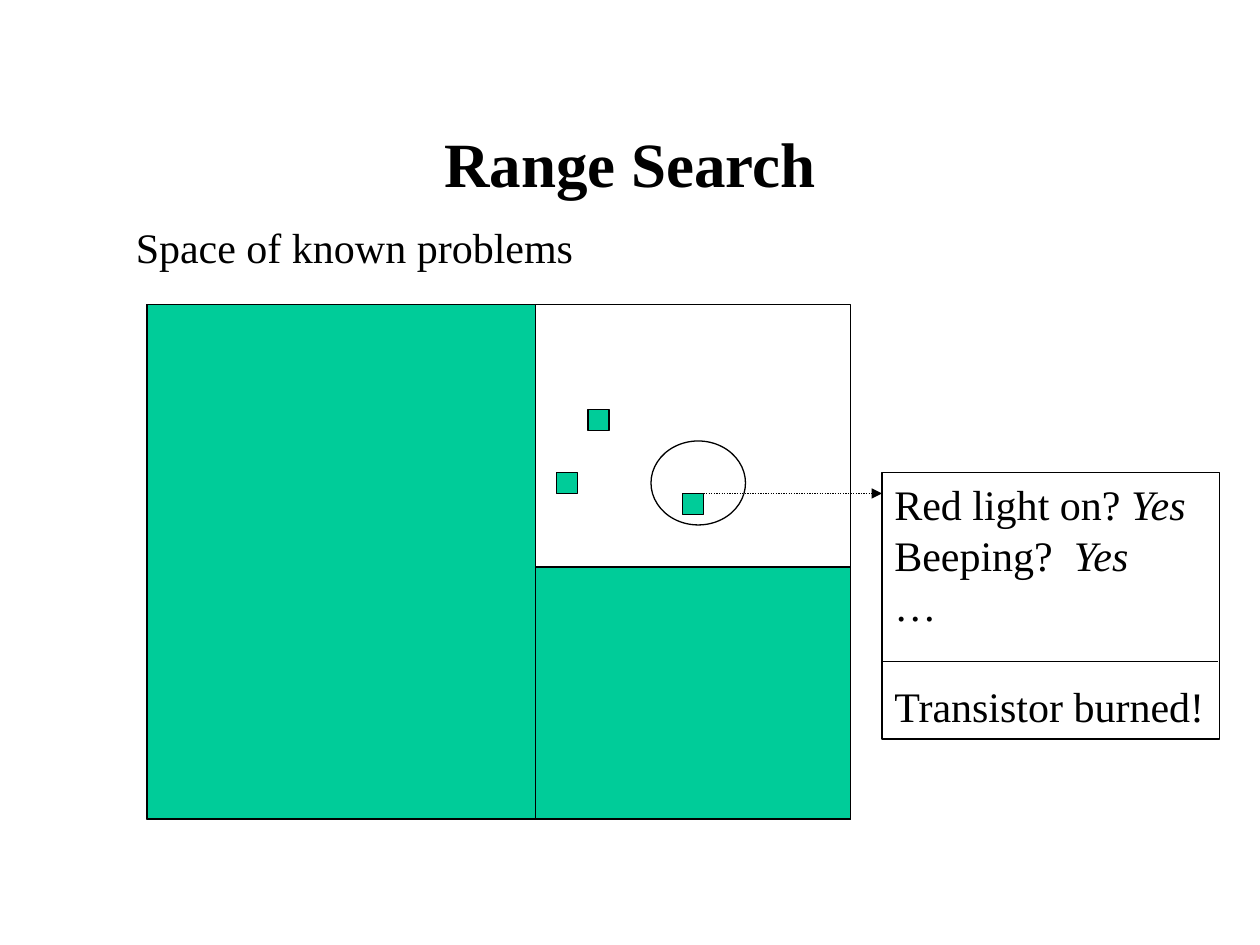
from pptx import Presentation
from pptx.dml.color import RGBColor
from pptx.enum.dml import MSO_LINE
from pptx.enum.shapes import MSO_CONNECTOR, MSO_SHAPE
from pptx.enum.text import MSO_ANCHOR, PP_ALIGN
from pptx.oxml.ns import qn
from pptx.util import Pt
from lxml.etree import SubElement

PX = 9525  # EMU per px, at 96 px to the inch
BLACK = RGBColor(0x00, 0x00, 0x00)
GREEN = RGBColor(0x00, 0xCC, 0x99)
FONT = "Times New Roman"
DOT = 16


def px(*lengths):
    return [length * PX for length in lengths]


def write(para, *parts, size=24, bold=False, align=PP_ALIGN.LEFT, pitch=None, before=0):
    """Fill a paragraph; each part is a (text, italic) pair."""
    para.alignment = align
    para.space_before = Pt(before)
    if pitch:
        para.line_spacing = Pt(pitch)
    for text, italic in parts:
        span = para.add_run()
        span.text = text
        span.font.name, span.font.size = FONT, Pt(size)
        span.font.bold, span.font.italic = bold, italic
        span.font.color.rgb = BLACK


def add_box(page, box, fill=None, kind=MSO_SHAPE.RECTANGLE):
    shape = page.shapes.add_shape(kind, *px(*box))
    shape.shadow.inherit = False
    if fill is None:
        shape.fill.background()
    else:
        shape.fill.solid()
        shape.fill.fore_color.rgb = fill
    shape.line.color.rgb = BLACK
    shape.line.width = Pt(0.75)
    return shape


def add_line(page, start, end, arrow=False):
    line = page.shapes.add_connector(MSO_CONNECTOR.STRAIGHT, *px(*start, *end))
    line.line.color.rgb = BLACK
    line.line.width = Pt(0.75)
    if arrow:
        line.line.dash_style = MSO_LINE.ROUND_DOT
        SubElement(line.line._get_or_add_ln(), qn("a:tailEnd"), type="triangle")
    SubElement(line._element.spPr, qn("a:effectLst"))


def add_title(page, box):
    title = page.shapes.title
    title.left, title.top, title.width, title.height = px(*box)
    title.text_frame.vertical_anchor = MSO_ANCHOR.MIDDLE
    write(title.text_frame.paragraphs[0], ("Range Search", False),
          size=36, bold=True, align=PP_ALIGN.CENTER)


def add_caption(page, box):
    frame = page.shapes.add_textbox(*px(*box)).text_frame
    frame.word_wrap = True
    write(frame.paragraphs[0], ("Space of known problems", False))


def add_problem_space(page, box):
    left, top, width, height = box
    split_x, split_y = 296, 200
    add_box(page, box)

    # Known problems
    for x, y in [(480, 200), (312, 128), (336, 80), (408, 144)]:
        add_box(page, (left + x, top + y, DOT, DOT), GREEN)

    # Regions ruled out, and the search range
    add_box(page, (left, top, split_x, height), GREEN)
    add_box(page, (left + split_x, top + split_y, width - split_x, height - split_y), GREEN)
    add_box(page, (left + 384, top + 104, 72, 64), kind=MSO_SHAPE.OVAL)


def add_problem_card(page, box):
    left, top, width, height = box
    frame = add_box(page, box).text_frame
    frame.word_wrap = False
    frame.vertical_anchor = MSO_ANCHOR.TOP
    pitch = 28.8
    rows = [
        ([("Red light on? ", False), ("Yes", True)], 0),
        ([("Beeping?  ", False), ("Yes", True)], 0),
        ([("…", False)], 0),
        ([("Transistor burned!", False)], pitch),
    ]
    for index, (parts, before) in enumerate(rows):
        para = frame.add_paragraph() if index else frame.paragraphs[0]
        write(para, *parts, pitch=pitch, before=before)

    # Divider, and the arrow from the problem found
    add_line(page, (left, top + 144), (left + width - 1, top + 144))
    add_line(page, (left - 136, top + DOT), (left, top + DOT), arrow=True)


def main():
    deck = Presentation()
    deck.slide_width, deck.slide_height = px(960, 720)
    page = deck.slides.add_slide(deck.slide_layouts[5])
    add_title(page, (72, 64, 816, 120))
    add_problem_space(page, (112, 232, 536, 392))
    add_problem_card(page, (672, 360, 257, 203))
    add_caption(page, (94, 164, 372, 48))
    deck.save("out.pptx")


if __name__ == "__main__":
    main()
